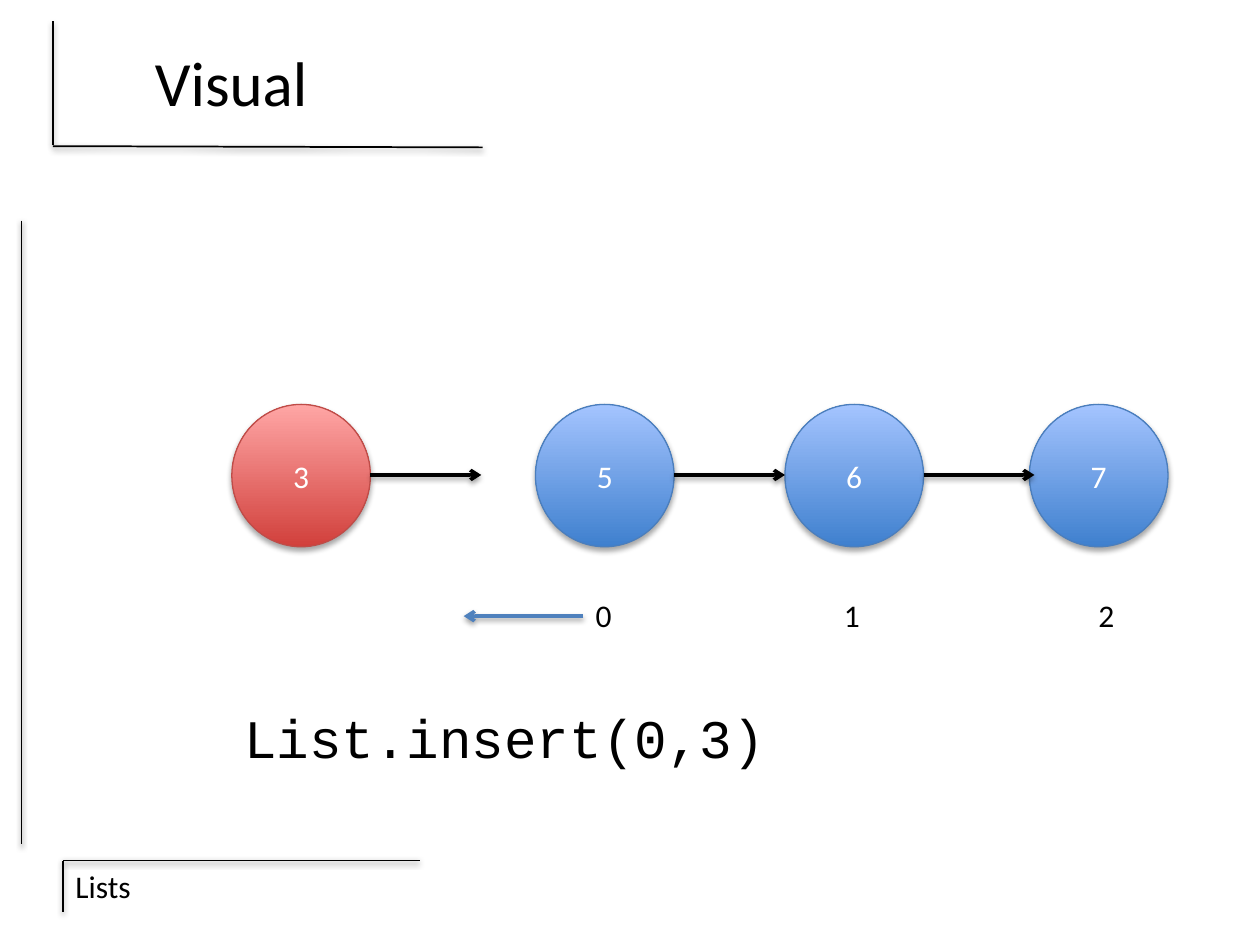
from lxml.etree import SubElement
from pptx import Presentation
from pptx.dml.color import RGBColor
from pptx.enum.shapes import MSO_CONNECTOR, MSO_SHAPE
from pptx.enum.text import MSO_ANCHOR, MSO_AUTO_SIZE, PP_ALIGN
from pptx.oxml.ns import qn
from pptx.util import Inches, Pt

COLS, ROWS = 100, 75
BLACK = RGBColor(0x00, 0x00, 0x00)
WHITE = RGBColor(0xFF, 0xFF, 0xFF)
ARROW_BLUE = RGBColor(0x4F, 0x81, 0xBD)
# Dark bottom, light top and outline of a node
BLUE = RGBColor(0x3F, 0x80, 0xCE), RGBColor(0xA4, 0xC4, 0xFF), RGBColor(0x4B, 0x7E, 0xBC)
RED = RGBColor(0xD1, 0x40, 0x3C), RGBColor(0xFF, 0xA6, 0xA5), RGBColor(0xBF, 0x4C, 0x48)

NODE_W, NODE_H, NODE_TOP = 11, 11.3, 32.1
LINK_LENGTH, LINK_ROW = 8.8, 37.7
LABEL_TOP = 46.8


class SlideBuilder:
    font = "Calibri"
    size = 18

    def __init__(self, prs):
        self.slide = prs.slides.add_slide(prs.slide_layouts[6])
        self.col = prs.slide_width / COLS
        self.row = prs.slide_height / ROWS

    def place(self, x, y, *more):
        """Turn pairs of columns and rows into slide lengths."""
        units = (self.col, self.row) * 2
        return [round(v * u) for v, u in zip((x, y, *more), units)]

    def add_run(self, sp, text, color=BLACK, align=PP_ALIGN.LEFT, **formats):
        p = sp.text_frame.paragraphs[0]
        p.alignment = align
        r = p.add_run()
        r.text = text
        r.font.color.rgb = color
        for name, value in {"name": self.font, "size": Pt(self.size), **formats}.items():
            setattr(r.font, name, value)

    def shadow(self, effects, distance, opacity):
        """Add a soft shadow that falls straight down."""
        shade = SubElement(effects, qn("a:outerShdw"), blurRad=str(Pt(3.15)),
                           dist=str(Pt(distance)), dir="5400000", rotWithShape="0")
        color = SubElement(shade, qn("a:srgbClr"), val=str(BLACK))
        SubElement(color, qn("a:alpha"), val=str(opacity * 1000))

    def text(self, box, text, wrap=False, anchor=MSO_ANCHOR.TOP, grow=True, **formats):
        sp = self.slide.shapes.add_textbox(*self.place(*box))
        fit = MSO_AUTO_SIZE.SHAPE_TO_FIT_TEXT if grow else MSO_AUTO_SIZE.NONE
        frame = {"word_wrap": wrap, "vertical_anchor": anchor, "auto_size": fit}
        for name, value in frame.items():
            setattr(sp.text_frame, name, value)
        self.add_run(sp, text, **formats)

    def line(self, start, end, color=BLACK, width=1, arrow=False):
        cx = self.slide.shapes.add_connector(
            MSO_CONNECTOR.STRAIGHT, *self.place(*start), *self.place(*end))
        cx.line.color.rgb = color
        cx.line.width = Pt(width)
        sp_pr = cx._element.spPr
        if arrow:
            SubElement(sp_pr.find(qn("a:ln")), qn("a:tailEnd"), type="arrow")
        self.shadow(SubElement(sp_pr, qn("a:effectLst")), 1.57, 38)

    def arrow(self, start, end, color=BLACK):
        self.line(start, end, color, width=2, arrow=True)

    def node(self, x, value, colors):
        sp = self.slide.shapes.add_shape(
            MSO_SHAPE.OVAL, *self.place(x, NODE_TOP, NODE_W, NODE_H))
        *shades, outline = colors
        sp.fill.gradient()
        sp.fill.gradient_angle = 90
        for stop, shade in zip(sp.fill.gradient_stops, shades):
            stop.color.rgb = shade
        sp.line.color.rgb = outline
        sp.line.width = Pt(0.75)
        sp.shadow.inherit = False
        self.shadow(sp._element.spPr.find(qn("a:effectLst")), 1.81, 35)
        sp.text_frame.vertical_anchor = MSO_ANCHOR.MIDDLE
        self.add_run(sp, value, WHITE, PP_ALIGN.CENTER)


def main():
    prs = Presentation()
    prs.slide_width, prs.slide_height = Inches(10), Inches(7.5)
    s = SlideBuilder(prs)

    frame_lines = [
        ((33.3, 68.3), (5, 68.3)),
        ((1.7, 17.5), (1.7, 67)),
        ((5, 68.3), (5, 72.4)),
        ((38.3, 11.7), (4.2, 11.6)),
        ((4.2, 1.7), (4.2, 11.5)),
    ]
    for start, end in frame_lines:
        s.line(start, end)
    s.text((5, 68.3, 24.2, 4), "Lists", wrap=True)
    s.text((5, 1.7, 26.7, 9.5), "Visual", wrap=True, anchor=MSO_ANCHOR.MIDDLE,
           grow=False, align=PP_ALIGN.CENTER, size=Pt(36))

    nodes = [(18.4, "3", RED), (42.5, "5", BLUE), (62.3, "6", BLUE), (81.7, "7", BLUE)]
    for node in nodes:
        s.node(*node)
    for x, *_ in nodes[:-1]:
        link = x + NODE_W
        s.arrow((link, LINK_ROW), (link + LINK_LENGTH, LINK_ROW))

    for index, x in enumerate((46.3, 66, 86.2)):
        s.text((x, LABEL_TOP, 3.3, 4), str(index))
    s.arrow((46.3, 48.9), (36.8, 48.9), ARROW_BLUE)
    s.text((18.4, 55.4, 43.8, 6.2), "List.insert(0,3)", name="Courier New", size=Pt(31))

    prs.save("out.pptx")


if __name__ == "__main__":
    main()
